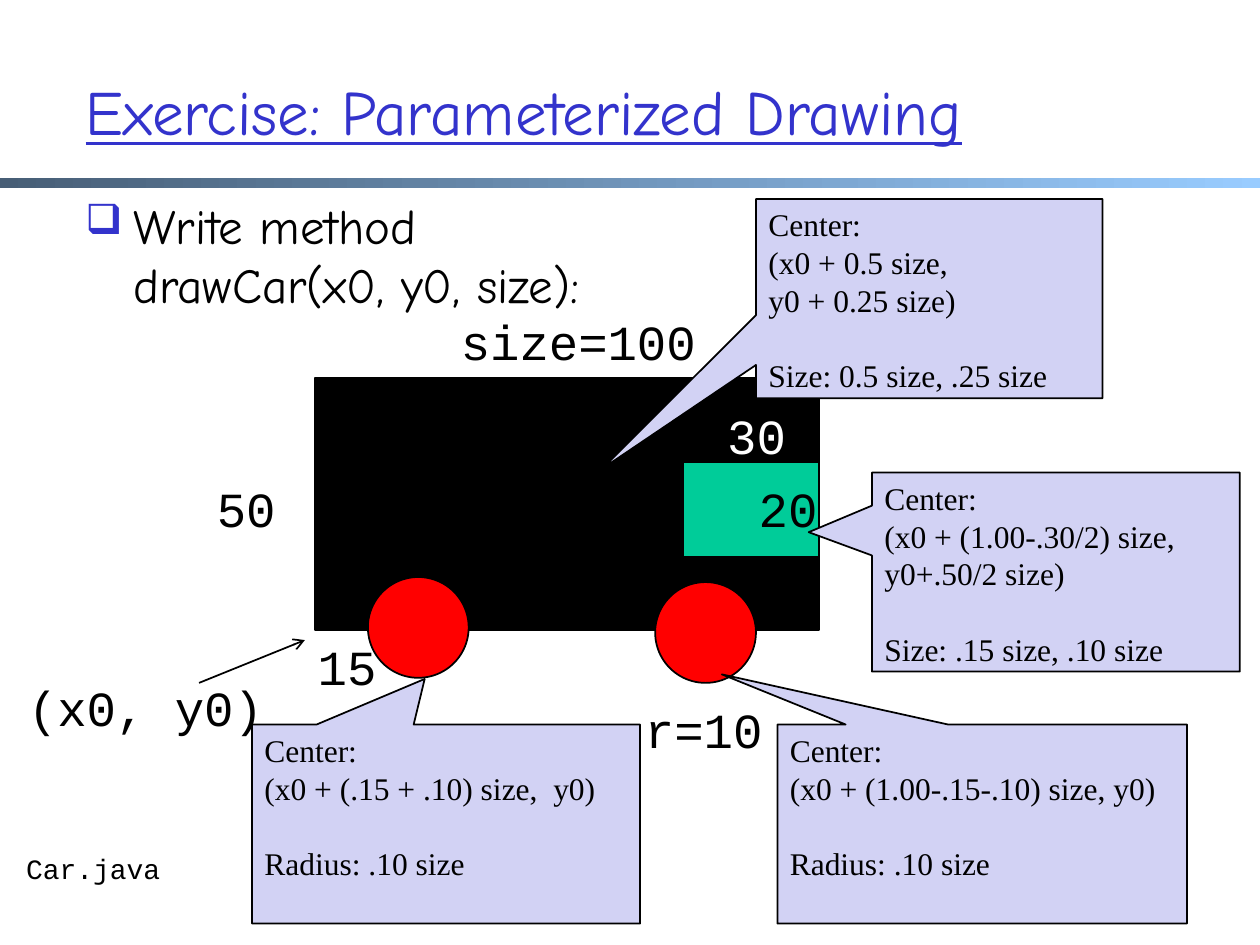
from lxml import etree
from pptx import Presentation
from pptx import util as u
from pptx.dml.color import RGBColor
from pptx.enum import shapes, text
from pptx.oxml.ns import qn

COLORS = {"black": "000000", "white": "FFFFFF", "title": "3333CC", "wheel": "FF0000",
          "window": "00CC99", "note": "D2D2F4", "bar_dark": "475E76", "bar_light": "99CCFF"}
TITLE = "Exercise: Parameterized Drawing"
BODY = "Write method \vdrawCar(x0, y0, size):"
CAR_PARTS = [
    ("RECTANGLE", (2.5, 3, 4, 2), "black"),
    ("OVAL", (2.92, 4.58, 0.8, 0.8), "wheel"),
    ("OVAL", (5.2, 4.62, 0.8, 0.8), "wheel"),
    ("RECTANGLE", (5.42, 3.67, 1.08, 0.75), "window"),
]
LABELS = [
    ("size=100", (3.55, 2.42, 2.08, 0.57), "black"),
    ("50", (1.62, 3.75, 0.67, 0.57), "black"),
    ("15", (2.42, 5, 0.67, 0.57), "black"),
    ("r=10", (5.01, 5.5, 1.15, 0.57), "black"),
    ("30", (5.67, 3.17, 0.67, 0.57), "white"),
    ("20", (5.92, 3.75, 0.67, 0.57), "black"),
    ("(x0, y0)", (0.11, 5.33, 2.09, 0.57), "black"),
]
NOTE_HEIGHT = 1.58
NOTES = [
    ((6, 1.58, 2.75), (-0.945, 0.856),
     ["Center:\v(x0 + 0.5 size, \vy0 + 0.25 size)", "Size: 0.5 size, .25 size"]),
    ((2, 5.75, 3.08), (-0.055, -0.729),
     ["Center:\v(x0 + (.15 + .10) size,  y0)", "Radius: .10 size"]),
    ((6.17, 5.75, 3.25), (-0.636, -0.752),
     ["Center:\v(x0 + (1.00-.15-.10) size, y0)", "Radius: .10 size"]),
    ((6.92, 3.75, 2.92), (-0.672, -0.2),
     ["Center:\v(x0 + (1.00-.30/2) size, \vy0+.50/2 size)", "Size: .15 size, .10 size"]),
]


def rgb(name):
    """Return the named colour."""
    return RGBColor.from_string(COLORS[name])


def box(at):
    """Convert inches to lengths."""
    return [u.Inches(v) for v in at]


def write(tf, paragraphs, font="Courier New", size=28, color="black", align="LEFT",
          anchor="TOP", wrap=True, underline=None, line=None, gap=0):
    """Fill a text frame with formatted paragraphs."""
    tf.word_wrap = wrap
    tf.auto_size = text.MSO_AUTO_SIZE.NONE
    tf.vertical_anchor = getattr(text.MSO_ANCHOR, anchor)
    for i, words in enumerate(paragraphs):
        p = tf.add_paragraph() if i else tf.paragraphs[0]
        p.text = words
        p.alignment = getattr(text.PP_ALIGN, align)
        p.space_before = u.Pt(gap if i else 0)
        if line:
            p.line_spacing = u.Pt(line)
        for r in p.runs:
            r.font.name, r.font.size = font, u.Pt(size)
            r.font.color.rgb, r.font.underline = rgb(color), underline


def add_shape(slide, kind, at, fill):
    """Add a filled shape with a thin black outline."""
    sp = slide.shapes.add_shape(getattr(shapes.MSO_SHAPE, kind), *box(at))
    sp.shadow.inherit = False
    sp.fill.solid()
    sp.fill.fore_color.rgb = rgb(fill)
    sp.line.color.rgb, sp.line.width = rgb("black"), u.Pt(1)
    return sp


def add_bar(slide):
    """Add the gradient bar under the title."""
    sp = add_shape(slide, "RECTANGLE", (0, 1.41, 10, 0.08), "bar_dark")
    sp.line.fill.background()
    sp.fill.gradient()
    sp.fill.gradient_angle = 0
    for stop, name, place in zip(sp.fill.gradient_stops, ("bar_dark", "bar_light"), (0, 1)):
        stop.color.rgb, stop.position = rgb(name), place


def add_bullet(p):
    """Give a paragraph a hanging box bullet."""
    pPr = p._p.get_or_add_pPr()
    pPr.set("marL", str(u.Inches(0.38)))
    pPr.set("indent", str(u.Inches(-0.38)))
    color = etree.SubElement(pPr, qn("a:buClr"))
    etree.SubElement(color, qn("a:srgbClr")).set("val", COLORS["title"])
    etree.SubElement(pPr, qn("a:buSzPct")).set("val", "85000")
    etree.SubElement(pPr, qn("a:buChar")).set("char", "❑")


def add_arrow(slide, start, end):
    """Add a black arrow between two points."""
    line = slide.shapes.add_connector(shapes.MSO_CONNECTOR.STRAIGHT, *box(start + end))
    line.line.color.rgb, line.line.width = rgb("black"), u.Pt(1)
    ln = line.line._get_or_add_ln()
    etree.SubElement(ln, qn("a:tailEnd")).set("type", "arrow")
    etree.SubElement(line._element.spPr, qn("a:effectLst"))


def main():
    """Build the slide."""
    prs = Presentation()
    prs.slide_width, prs.slide_height = box((10, 7.5))
    slide = prs.slides.add_slide(prs.slide_layouts[5])
    add_bar(slide)

    title = slide.shapes.title
    title.left, title.top, title.width, title.height = box((0.58, 0.25, 8.5, 1.25))
    write(title.text_frame, [TITLE], font="Comic Neue", size=36, color="title",
          anchor="MIDDLE", underline=True)
    body = slide.shapes.add_textbox(*box((0.58, 1.5, 8.5, 5.08)))
    write(body.text_frame, [BODY], font="Comic Neue")
    add_bullet(body.text_frame.paragraphs[0])

    for kind, at, fill in CAR_PARTS:
        add_shape(slide, kind, at, fill)
    for words, at, color in LABELS:
        label = slide.shapes.add_textbox(*box(at))
        write(label.text_frame, [words], color=color, align="CENTER", wrap=False)
    add_arrow(slide, (1.58, 5.42), (2.42, 5.08))
    for at, tip, words in NOTES:
        note = add_shape(slide, "RECTANGULAR_CALLOUT", at + (NOTE_HEIGHT,), "note")
        note.adjustments[0], note.adjustments[1] = tip
        write(note.text_frame, words, font="Times New Roman", size=18, line=21.6, gap=21.6)
    file_name = slide.shapes.add_textbox(*box((0.11, 6.71, 1.28, 0.37)))
    write(file_name.text_frame, ["Car.java"], size=16, wrap=False)

    prs.save("out.pptx")


if __name__ == "__main__":
    main()
